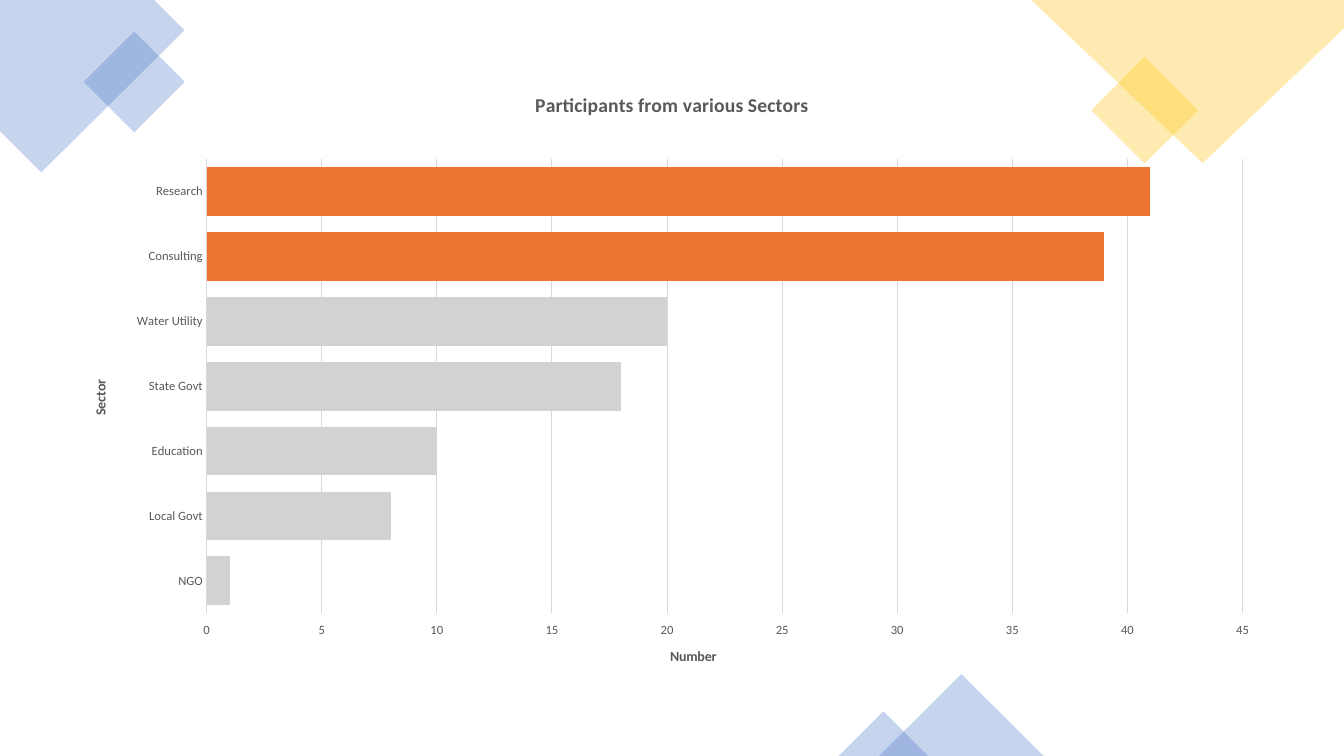
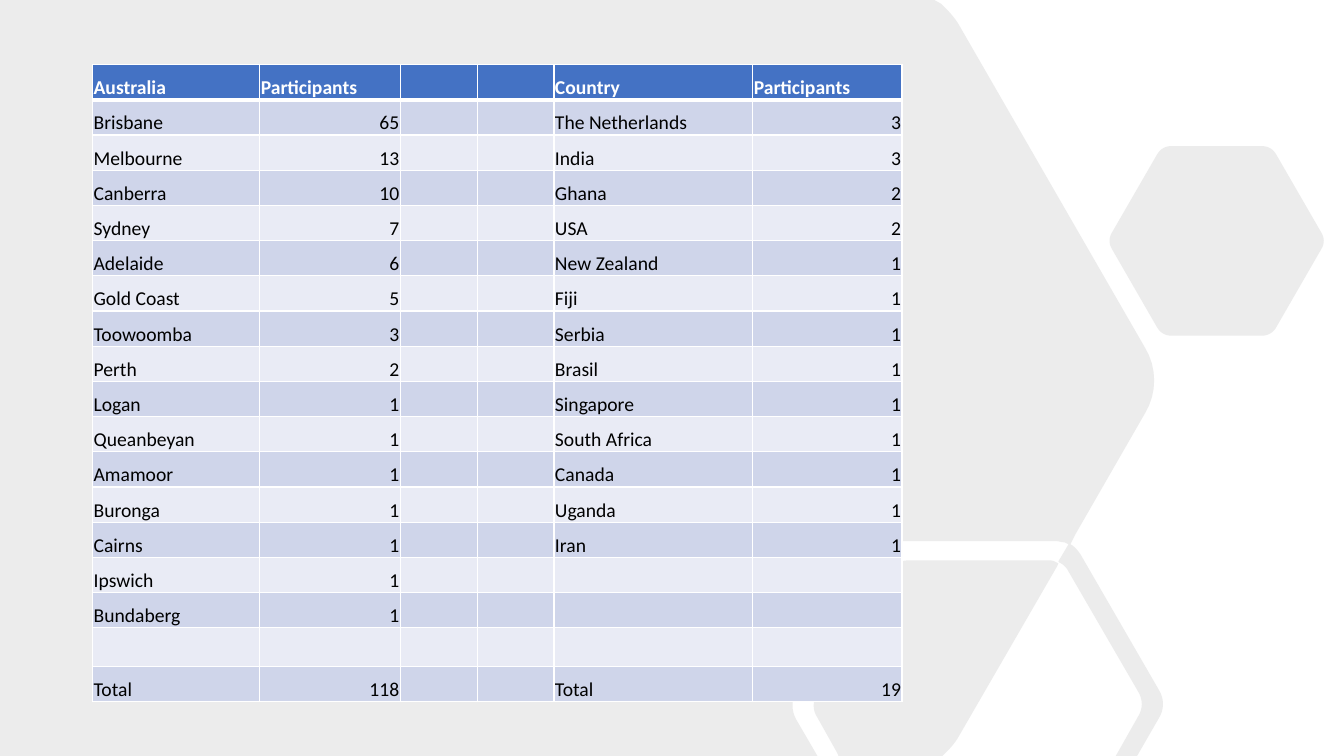
from dataclasses import dataclass

import lxml.etree
import pptx
import pptx.chart.data
import pptx.dml.color
import pptx.enum.chart
import pptx.enum.shapes
import pptx.enum.text
import pptx.oxml.ns
import pptx.util

Pt = pptx.util.Pt
RGB = pptx.dml.color.RGBColor.from_string
qn = pptx.oxml.ns.qn
SHAPES = pptx.enum.shapes.MSO_SHAPE
ALIGN = pptx.enum.text.PP_ALIGN


@dataclass(frozen=True)
class Theme:
    font: str = "Calibri"
    blue: str = "4472C4"
    gold: str = "FFC000"
    gray: str = "808080"
    muted: str = "595959"
    grid: str = "D9D9D9"
    bar: str = "D2D2D2"
    accent: str = "ED7331"
    white: str = "FFFFFF"
    black: str = "000000"
    bands: tuple = ("E9EBF5", "CFD5EA")
    title_size: int = 14
    table_size: int = 14
    axis_title_size: int = 10
    tick_size: int = 9


THEME = Theme()


def write(frame, text, *, size, color, bold=False, align=None):
    paragraph = frame.paragraphs[0]
    paragraph.alignment = align
    run = paragraph.add_run()
    run.text = text
    run.font.name = THEME.font
    run.font.size = Pt(size)
    run.font.bold = bold
    run.font.color.rgb = RGB(color)


def place(part, chart_size, **lengths):
    old = part.find(qn("c:layout"))
    if old is not None:
        part.remove(old)
    layout = lxml.etree.Element(qn("c:layout"))
    manual = lxml.etree.SubElement(layout, qn("c:manualLayout"))
    values = {"layoutTarget": "inner"} if "w" in lengths else {}
    values.update(xMode="edge", yMode="edge")
    for tag, length in lengths.items():
        values[tag] = length / chart_size[tag in "yh"]
    for tag, value in values.items():
        lxml.etree.SubElement(manual, qn(f"c:{tag}")).set("val", str(value))
    part.insert(0 if part.find(qn("c:tx")) is None else 1, layout)


def underline(cell, color, width):
    line = lxml.etree.Element(qn("a:lnB"), w=str(Pt(width)))
    fill = lxml.etree.SubElement(line, qn("a:solidFill"))
    lxml.etree.SubElement(fill, qn("a:srgbClr")).set("val", color)
    cell._tc.get_or_add_tcPr().insert(0, line)


def trace(steps, samples=8):
    points = [steps[0]]
    for step in steps[1:]:
        if len(step) == 2:
            points.append(step)
            continue
        start, controls = points[-1], (step[:2], step[2:4], step[4:])
        for index in range(1, samples + 1):
            t = index / samples
            weights = ((1 - t) ** 3, 3 * t * (1 - t) ** 2, 3 * t * t * (1 - t), t ** 3)
            points.append(tuple(
                sum(w * p[axis] for w, p in zip(weights, (start, *controls)))
                for axis in (0, 1)))
    return points


class Deck:
    def __init__(self, theme):
        self.theme = theme
        self.presentation = pptx.Presentation()
        self.presentation.slide_width = Pt(960)
        self.presentation.slide_height = Pt(540)
        self.slide = None

    def new_slide(self):
        self.slide = self.presentation.slides.add_slide(self.presentation.slide_layouts[6])

    def tint(self, shape, color, opacity):
        shape.shadow.inherit = False
        shape.fill.solid()
        shape.fill.fore_color.rgb = RGB(color)
        tone = shape._element.spPr.find(".//" + qn("a:srgbClr"))
        lxml.etree.SubElement(tone, qn("a:alpha")).set("val", str(opacity * 1000))
        shape.line.fill.background()

    def preset(self, kind, left, top, width, height, color, *, opacity=30, rotation=0):
        shape = self.slide.shapes.add_shape(kind, Pt(left), Pt(top), Pt(width), Pt(height))
        shape.rotation = rotation
        self.tint(shape, color, opacity)

    def outline(self, contours, color, *, opacity=30):
        builder = None
        for contour in contours:
            first, *rest = [(x * 100, y * 100) for x, y in trace(contour)]
            if builder is None:
                builder = self.slide.shapes.build_freeform(*first, scale=Pt(1) / 100)
            else:
                builder.move_to(*first)
            builder.add_line_segments(rest, close=True)
        self.tint(builder.convert_to_shape(), color, opacity)

    def axis(self, axis, title, chart_size, x, y):
        theme = self.theme
        write(axis.axis_title.text_frame, title, size=theme.axis_title_size,
              color=theme.muted, bold=True)
        place(axis.axis_title._element, chart_size, x=x, y=y)
        axis.major_tick_mark = axis.minor_tick_mark = pptx.enum.chart.XL_TICK_MARK.NONE
        font = axis.tick_labels.font
        font.name, font.size = theme.font, Pt(theme.tick_size)
        font.color.rgb = RGB(theme.muted)

    def bar_chart(self, title, totals, highlighted, left, top, width, height):
        theme = self.theme
        size = (width, height)
        data = pptx.chart.data.CategoryChartData()
        data.categories = list(totals)
        data.add_series("Series 1", list(totals.values()))
        chart = self.slide.shapes.add_chart(
            pptx.enum.chart.XL_CHART_TYPE.BAR_STACKED,
            Pt(left), Pt(top), Pt(width), Pt(height), data).chart
        chart.has_legend = False
        chart.font.name, chart.font.size = theme.font, Pt(theme.axis_title_size)
        write(chart.chart_title.text_frame, title, size=theme.title_size,
              color=theme.muted, bold=True)
        place(chart.chart_title._element, size, x=329.4, y=12.3)
        place(chart._chartSpace.chart.plotArea, size, x=97.2, y=63.2, w=740, h=324.6)

        plot = chart.plots[0]
        plot.gap_width, plot.overlap, plot.vary_by_categories = 33, 100, False
        series = plot.series[0]
        series.format.fill.solid()
        series.format.fill.fore_color.rgb = RGB(theme.bar)
        for index, name in enumerate(totals):
            if name in highlighted:
                fill = series.points[index].format.fill
                fill.solid()
                fill.fore_color.rgb = RGB(theme.accent)

        sectors, numbers = chart.category_axis, chart.value_axis
        self.axis(sectors, "Sector", size, 13, 429.5 - 210.5)
        self.axis(numbers, "Number", size, 426.4, 410.3)
        sectors.reverse_order = True
        numbers.tick_label_position = pptx.enum.chart.XL_TICK_LABEL_POSITION.HIGH
        numbers.minimum_scale, numbers.maximum_scale, numbers.major_unit = 0, 45, 5
        numbers.has_major_gridlines = True
        numbers.format.line.fill.background()
        for line in (sectors.format.line, numbers.major_gridlines.format.line):
            line.width = Pt(0.75)
            line.color.rgb = RGB(theme.grid)

    def table(self, rows, left, top, widths, heights):
        theme = self.theme
        table = self.slide.shapes.add_table(
            len(rows), len(widths), Pt(left), Pt(top),
            Pt(sum(widths)), Pt(sum(heights))).table
        for column, width in zip(table.columns, widths):
            column.width = Pt(width)
        for index, (row, height, values) in enumerate(zip(table.rows, heights, rows)):
            row.height = Pt(height)
            header = index == 0
            for cell, value in zip(row.cells, values):
                cell.margin_left = cell.margin_top = cell.margin_right = Pt(0.7)
                cell.margin_bottom = Pt(0)
                cell.vertical_anchor = pptx.enum.text.MSO_ANCHOR.BOTTOM
                cell.fill.solid()
                cell.fill.fore_color.rgb = RGB(theme.blue if header else theme.bands[index % 2])
                if header:
                    underline(cell, theme.white, 3)
                if value != "":
                    write(cell.text_frame, str(value), size=theme.table_size, bold=header,
                          color=theme.white if header else theme.black,
                          align=ALIGN.RIGHT if isinstance(value, int) else ALIGN.LEFT)


SECTORS = {"Research": 41, "Consulting": 39, "Water Utility": 20, "State Govt": 18,
           "Education": 10, "Local Govt": 8, "NGO": 1}

CITIES = [("Brisbane", 65), ("Melbourne", 13), ("Canberra", 10), ("Sydney", 7),
          ("Adelaide", 6), ("Gold Coast", 5), ("Toowoomba", 3), ("Perth", 2),
          ("Logan", 1), ("Queanbeyan", 1), ("Amamoor", 1), ("Buronga", 1),
          ("Cairns", 1), ("Ipswich", 1), ("Bundaberg", 1)]

COUNTRIES = [("The Netherlands", 3), ("India", 3), ("Ghana", 2), ("USA", 2),
             ("New Zealand", 1), ("Fiji", 1), ("Serbia", 1), ("Brasil", 1),
             ("Singapore", 1), ("South Africa", 1), ("Canada", 1), ("Uganda", 1),
             ("Iran", 1)]

LOWER_HEXAGON = [
    (648.7, 400.3), (748.1, 400.3), (750.2, 400.3, 751.7, 400.3, 753.1, 401),
    (756, 402.5), (754.6, 405.4), (684.7, 526.3),
    (682.6, 529.9, 679.7, 533.5, 676.8, 536.4), (673.2, 540), (599, 540),
    (597.6, 537.1), (583.9, 512.6), (580.3, 507.6, 580.3, 500.4, 583.9, 495.4),
    (633.6, 409), (636.5, 403.9, 642.2, 400.3, 648.7, 400.3)]

SMALL_HEXAGON = [
    (836.6, 104.4), (901.4, 104.4), (905.8, 104.4, 909.4, 106.6, 911.5, 110.2),
    (943.9, 166.3), (946.1, 169.9, 946.1, 174.2, 943.9, 177.8),
    (911.5, 234), (909.4, 237.6, 905.8, 239.8, 901.4, 239.8),
    (836.6, 239.8), (832.3, 239.8, 828.7, 237.6, 826.6, 234),
    (794.2, 177.8), (792, 174.2, 792, 169.9, 794.2, 166.3),
    (826.6, 110.2), (828.7, 106.6, 832.3, 104.4, 836.6, 104.4)]

LARGE_HEXAGON_WITH_RING = [
    (0, 0), (667.4, 0), (672.5, 2.9), (676.8, 7.2, 681.1, 11.5, 684.7, 17.3),
    (817.9, 248.4), (826.6, 262.8, 826.6, 280.8, 817.9, 295.2),
    (768.2, 381.6), (764.6, 388.8), (767.5, 390.2, 769.7, 393.1, 771.8, 396),
    (828, 493.2), (831.6, 499, 831.6, 506.9, 828, 512.6),
    (814.3, 536.4), (812.2, 540), (797, 540), (812.9, 511.9),
    (816.5, 506.2, 816.5, 499.7, 812.9, 493.9), (763.2, 408.2),
    (761.8, 405.4, 759.6, 403.2, 756.7, 401.8), (756, 401), (760.3, 393.8),
    (763.2, 388.8), (760.3, 387.4), (758.2, 387.4, 756.7, 386.6, 754.6, 386.6),
    (642.2, 386.6), (635, 386.6, 628.6, 391, 625, 397.4),
    (568.8, 493.9), (565.2, 500.4, 565.2, 507.6, 568.8, 514.1),
    (578.9, 531.4), (583.9, 540), (0, 540)]


def sectors_slide(deck):
    blue, gold = deck.theme.blue, deck.theme.gold
    deck.new_slide()
    deck.outline([[(110.2, 0), (0, 0), (0, 93.6), (29.5, 123.1), (131.8, 21.6)]], blue)
    deck.preset(SHAPES.RECTANGLE, 70.4, 33, 51, 51, blue, rotation=315)
    deck.preset(SHAPES.RECTANGLE, 790.6, 51.8, 54, 54, gold, rotation=315)
    deck.outline([[(960, 0), (736.6, 0), (859, 116.6), (960, 20.2)]], gold)
    deck.preset(SHAPES.ISOSCELES_TRIANGLE, 628, 481.5, 117.5, 58.5, blue)
    deck.preset(SHAPES.ISOSCELES_TRIANGLE, 599, 508, 64, 32, blue)
    deck.bar_chart("Participants from various Sectors", SECTORS,
                   {"Research", "Consulting"}, 50.4, 50.4, 859, 438.5)


def places_slide(deck):
    deck.new_slide()
    deck.outline([LOWER_HEXAGON, SMALL_HEXAGON, LARGE_HEXAGON_WITH_RING],
                 deck.theme.gray, opacity=15)
    blank = ("", "")
    countries = COUNTRIES + [blank] * (len(CITIES) - len(COUNTRIES))
    rows = [("Australia", "Participants", *blank, "Country", "Participants")]
    rows += [(*city, *blank, *country) for city, country in zip(CITIES, countries)]
    rows.append(blank * 3)
    rows.append(("Total", sum(count for _, count in CITIES), *blank,
                 "Total", sum(count for _, count in COUNTRIES)))
    heights = [25.17] * (len(rows) - 2) + [27.4, 25.17]
    deck.table(rows, 66.2, 46.2, [119.4, 100.3, 55, 54.9, 142, 106.6], heights)


def main():
    deck = Deck(THEME)
    sectors_slide(deck)
    places_slide(deck)
    deck.presentation.save("out.pptx")


if __name__ == "__main__":
    main()
